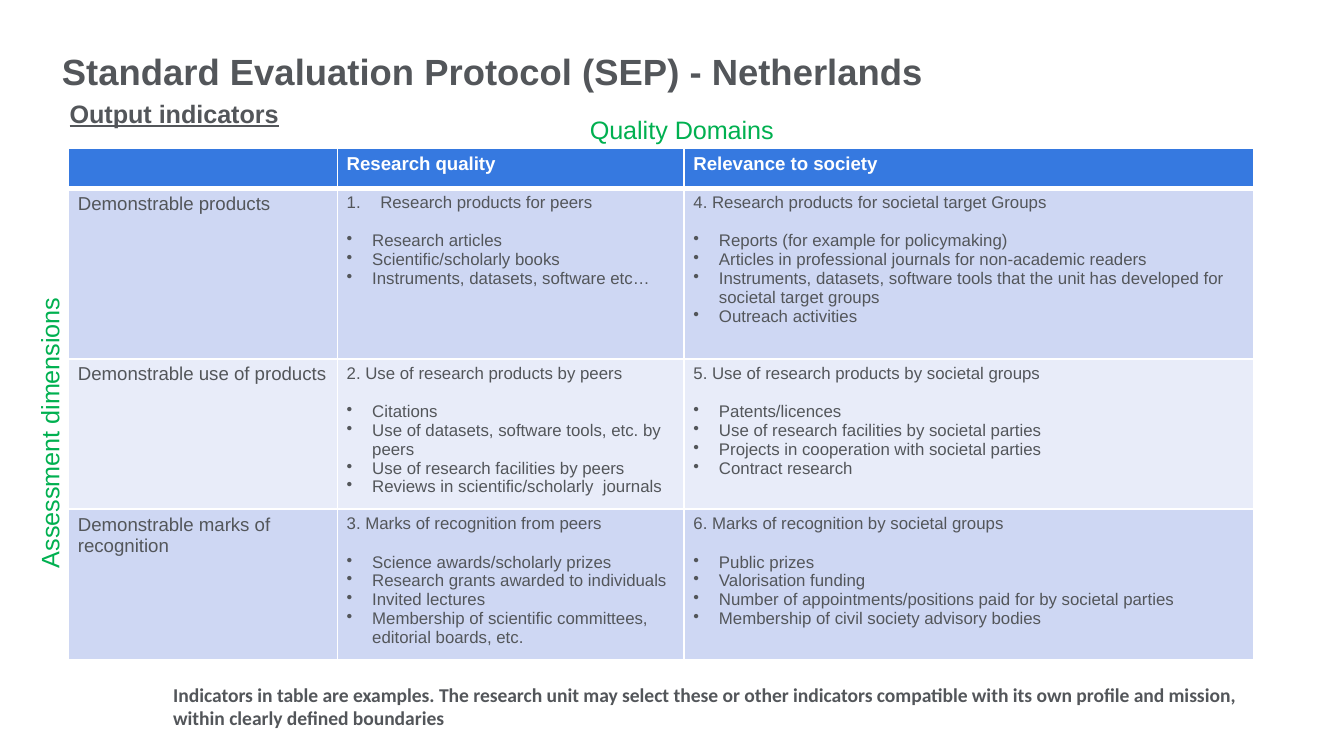
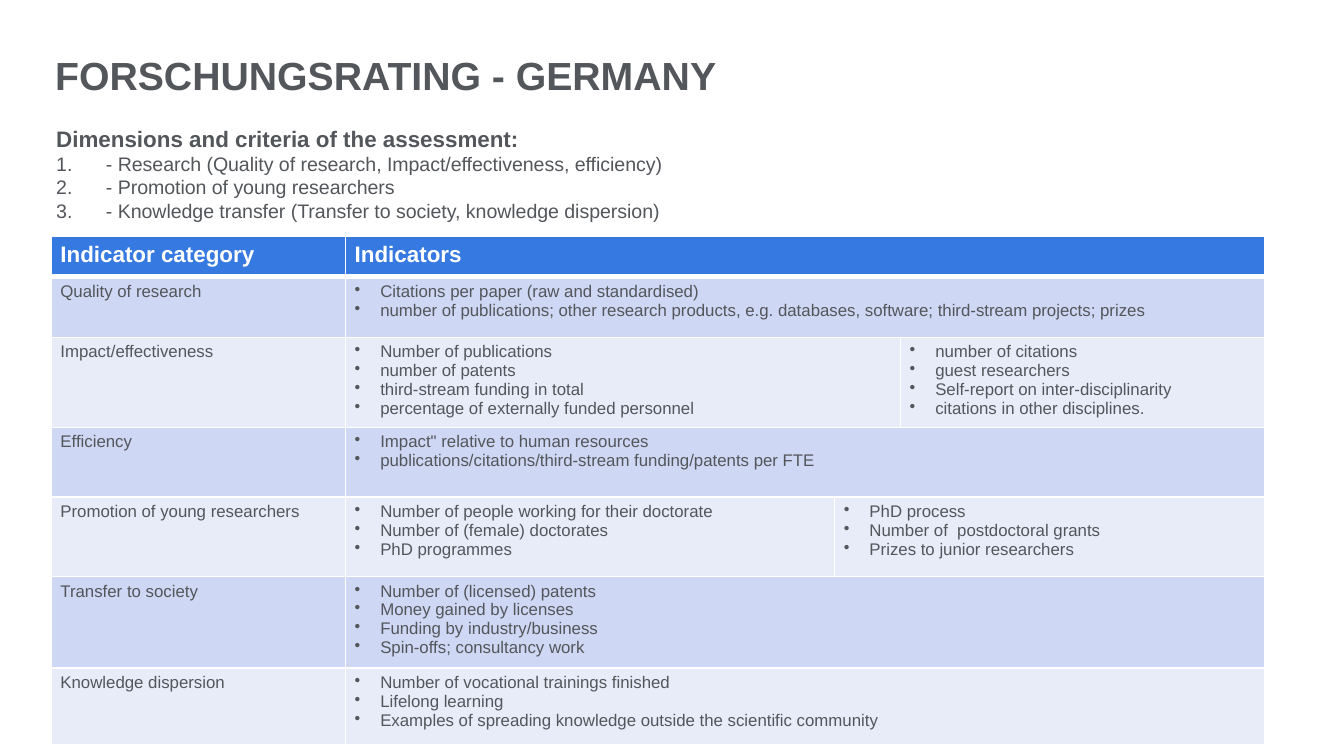
"""Builds two slides on national research evaluation schemes."""
import dataclasses
import typing

import lxml.etree
import pptx
import pptx.dml.color
import pptx.enum.text
import pptx.oxml.ns
import pptx.presentation
import pptx.slide
import pptx.util

COLORS = {
    "text": "53565A",
    "axis": "00B050",
    "header": "3679E0",
    "band_dark": "CED7F3",
    "band_light": "E8ECF9",
    "white": "FFFFFF",
}
GRID_COLUMNS, GRID_ROWS = 100, 56.25
GRID_UNIT = pptx.util.Inches(10) / GRID_COLUMNS
BULLET_INDENT = 1.9


@dataclasses.dataclass(frozen=True)
class Line:
    """One paragraph with its look; the indent is in grid columns."""
    text: str
    size: float = 9
    color: str = "text"
    bold: bool = False
    underline: bool = False
    font: str = "Arial"
    marker: typing.Literal["", "bullet", "number"] = ""
    indent: float = BULLET_INDENT
    after: float = 0
    spacing: float = 1.0


@dataclasses.dataclass(frozen=True)
class Box:
    """An area in grid columns and rows."""
    left: float
    top: float
    width: float
    height: float

    def lengths(self) -> list[pptx.util.Emu]:
        """Return left, top, width and height as lengths."""
        return [grid(value) for value in dataclasses.astuple(self)]


@dataclasses.dataclass(frozen=True)
class Label:
    """A free text box."""
    box: Box
    lines: list[Line]
    wrap: bool = True
    rotation: float = 0


@dataclasses.dataclass(frozen=True)
class Cell:
    """Table cell content and the number of columns it covers."""
    lines: list[Line]
    span: int = 1


@dataclasses.dataclass(frozen=True)
class Grid:
    """A table with its column widths, row heights and cells."""
    left: float
    top: float
    widths: list[float]
    heights: list[float]
    rows: list[list[Cell]]


def grid(count: float) -> pptx.util.Emu:
    """Convert grid units to a length."""
    return pptx.util.Emu(round(count * GRID_UNIT))


def rgb(name: str) -> pptx.dml.color.RGBColor:
    """Look up a named colour."""
    return pptx.dml.color.RGBColor.from_string(COLORS[name])


def add_element(parent: typing.Any, tag: str, **attributes: str) -> typing.Any:
    """Append a DrawingML child element."""
    return lxml.etree.SubElement(parent, pptx.oxml.ns.qn(f"a:{tag}"), **attributes)


def write(frame: typing.Any, lines: list[Line]) -> None:
    """Fill a text frame with formatted paragraphs."""
    for index, line in enumerate(lines):
        paragraph = frame.add_paragraph() if index else frame.paragraphs[0]
        paragraph.alignment = pptx.enum.text.PP_ALIGN.LEFT
        paragraph.line_spacing = line.spacing
        paragraph.space_before = pptx.util.Pt(0)
        paragraph.space_after = pptx.util.Pt(line.after)
        if line.marker:
            properties = paragraph._p.get_or_add_pPr()
            properties.set("marL", str(grid(line.indent)))
            properties.set("indent", str(-grid(line.indent)))
            if line.marker == "bullet":
                add_element(properties, "buChar", char="•")
            else:
                add_element(properties, "buAutoNum", type="arabicPeriod")
        font = paragraph.font
        font.name, font.size = line.font, pptx.util.Pt(line.size)
        font.bold, font.underline = line.bold, line.underline
        font.color.rgb = rgb(line.color)
        if line.text:
            paragraph.add_run().text = line.text
        else:
            add_element(paragraph._p, "endParaRPr", sz=str(round(line.size * 100)))


def set_title(slide: pptx.slide.Slide, box: Box, text: str, size: float) -> None:
    """Place and format the title placeholder."""
    title = slide.shapes.title
    title.left, title.top, title.width, title.height = box.lengths()
    frame = title.text_frame
    frame.auto_size = pptx.enum.text.MSO_AUTO_SIZE.NONE
    frame.vertical_anchor = pptx.enum.text.MSO_ANCHOR.TOP
    frame.margin_left = frame.margin_right = grid(0.9)
    frame.margin_top = frame.margin_bottom = grid(0.4)
    write(frame, [Line(text, size, bold=True, spacing=0.9)])


def add_label(slide: pptx.slide.Slide, label: Label) -> None:
    """Add a text box that grows with its text."""
    shape = slide.shapes.add_textbox(*label.box.lengths())
    shape.rotation = label.rotation
    shape.text_frame.word_wrap = label.wrap
    shape.text_frame.auto_size = pptx.enum.text.MSO_AUTO_SIZE.SHAPE_TO_FIT_TEXT
    write(shape.text_frame, label.lines)


def add_borders(cell: typing.Any, row: int) -> None:
    """Rule a cell in white, thicker below the header."""
    thick = {0: "lnB", 1: "lnT"}.get(row)
    for side in ("lnL", "lnR", "lnT", "lnB"):
        points = 3 if side == thick else 1
        border = add_element(cell._tc.get_or_add_tcPr(), side, w=str(pptx.util.Pt(points)))
        fill = add_element(border, "solidFill")
        add_element(fill, "srgbClr", val=COLORS["white"])


def add_grid(slide: pptx.slide.Slide, content: Grid) -> None:
    """Add a banded table with merged cells where a cell spans columns."""
    box = Box(content.left, content.top, sum(content.widths), sum(content.heights))
    table = slide.shapes.add_table(
        len(content.heights), len(content.widths), *box.lengths()).table
    table.horz_banding = False
    for column, width in zip(table.columns, content.widths):
        column.width = grid(width)
    for row, (height, cells) in enumerate(zip(content.heights, content.rows)):
        table.rows[row].height = grid(height)
        band = "header" if row == 0 else "band_dark" if row % 2 else "band_light"
        for cell in table.rows[row].cells:
            add_borders(cell, row)
            cell.fill.solid()
            cell.fill.fore_color.rgb = rgb(band)
            cell.margin_left = cell.margin_right = grid(0.7)
            cell.margin_top = cell.margin_bottom = grid(0.4)
        column = 0
        for item in cells:
            cell = table.cell(row, column)
            if item.span > 1:
                cell.merge(table.cell(row, column + item.span - 1))
            write(cell.text_frame, item.lines)
            column += item.span


def header_row(size: float, *cells: tuple[str, int]) -> list[Cell]:
    """Make header cells from texts and spans."""
    return [Cell([Line(text, size, "white", bold=True)], span) for text, span in cells]


def bullets(*texts: str) -> list[Line]:
    """Make bulleted lines."""
    return [Line(text, marker="bullet") for text in texts]


def topic(heading: str, *texts: str, numbered: bool = False) -> Cell:
    """Make a cell with a heading set apart from its bullets."""
    marker = "number" if numbered else ""
    return Cell([Line(heading, marker=marker, indent=2.5, after=10.35), *bullets(*texts)])


def dimension(text: str) -> Cell:
    """Make a row heading of the indicator table."""
    return Cell([Line(text, 10)])


def category(name: str, *groups: tuple[int, list[str]]) -> list[Cell]:
    """Make a row of a category and its spanned bullet groups."""
    return [Cell([Line(name)])] + [Cell(bullets(*texts), span) for span, texts in groups]


NETHERLANDS_TABLE = Grid(5.1, 11, [20, 25.8, 42.4], [3, 12.7, 11.2, 11.2], [
    header_row(10, ("", 1), ("Research quality", 1), ("Relevance to society", 1)),
    [dimension("Demonstrable products"),
     topic("Research products for peers", "Research articles", "Scientific/scholarly books",
           "Instruments, datasets, software etc…", numbered=True),
     topic("4. Research products for societal target Groups",
           "Reports (for example for policymaking)",
           "Articles in professional journals for non-academic readers",
           "Instruments, datasets, software tools that the unit has developed for "
           "societal target groups",
           "Outreach activities")],
    [dimension("Demonstrable use of products"),
     topic("2. Use of research products by peers", "Citations",
           "Use of datasets, software tools, etc. by peers",
           "Use of research facilities by peers",
           "Reviews in scientific/scholarly  journals"),
     topic("5. Use of research products by societal groups", "Patents/licences",
           "Use of research facilities by societal parties",
           "Projects in cooperation with societal parties", "Contract research")],
    [dimension("Demonstrable marks of recognition"),
     topic("3. Marks of recognition from peers", "Science awards/scholarly prizes",
           "Research grants awarded to individuals", "Invited lectures",
           "Membership of scientific committees, editorial boards, etc."),
     topic("6. Marks of recognition by societal groups", "Public prizes",
           "Valorisation funding",
           "Number of appointments/positions paid for by societal parties",
           "Membership of civil society advisory bodies")],
])
NETHERLANDS_LABELS = [
    Label(Box(4.2, 6.8, 90, 5.6),
          [Line("Output indicators", 13.5, bold=True, underline=True)]),
    Label(Box(42.9, 8, 15.9, 3.3), [Line("Quality Domains", 13.5, "axis")], wrap=False),
    Label(Box(-7.5, 30.4, 22.4, 3.3), [Line("Assessment dimensions", 13.5, "axis")],
          wrap=False, rotation=270),
    Label(Box(11.9, 50.3, 82.2, 4.5), [Line(
        "Indicators in table are examples. The research unit may select these or other "
        "indicators compatible with its own profile and mission, within clearly defined "
        "boundaries", 10.5, bold=True, font="Calibri")]),
]
GERMANY_TABLE = Grid(
    3.8, 17.6, [21.9, 36.4, 4.9, 27.1], [3, 4.5, 6.7, 5.2, 5.9, 6.8, 5.7], [
        header_row(12, ("Indicator category", 1), ("Indicators", 3)),
        category("Quality of research", (3, [
            "Citations per paper (raw and standardised)",
            "number of publications; other research products, e.g. databases, software; "
            "third‐stream projects; prizes"])),
        category("Impact/effectiveness", (2, [
            "Number of publications", "number of patents", "third‐stream funding in total",
            "percentage of externally funded personnel"]), (1, [
                "number of citations", "guest researchers",
                "Self‐report on inter-disciplinarity", "citations in other disciplines."])),
        category("Efficiency", (3, [
            "Impact\" relative to human resources",
            "publications/citations/third‐stream funding/patents per FTE"])),
        category("Promotion of young researchers", (1, [
            "Number of people working for their doctorate", "Number of (female) doctorates",
            "PhD programmes"]), (2, [
                "PhD process", "Number of  postdoctoral grants",
                "Prizes to junior researchers"])),
        category("Transfer to society", (3, [
            "Number of (licensed) patents", "Money gained by licenses",
            "Funding by industry/business", "Spin‐offs; consultancy work"])),
        category("Knowledge dispersion", (3, [
            "Number of vocational trainings finished", "Lifelong learning",
            "Examples of spreading knowledge outside the scientific community"])),
    ])
CRITERIA = [
    "‐ Research (Quality of research, Impact/effectiveness, efficiency)",
    "‐ Promotion of young researchers",
    "‐ Knowledge transfer (Transfer to society, knowledge dispersion)",
]
GERMANY_LABELS = [Label(Box(3.2, 8.8, 91.2, 8.3), [
    Line("Dimensions and criteria of the assessment:", 12, bold=True),
    *[Line(text, 10.5, marker="number", indent=3.7) for text in CRITERIA],
])]


def add_slide(presentation: pptx.presentation.Presentation, title: str, title_box: Box,
              title_size: float, content: Grid, labels: list[Label]) -> None:
    """Add a slide with a title, a table and text boxes."""
    slide = presentation.slides.add_slide(presentation.slide_layouts[5])
    set_title(slide, title_box, title, title_size)
    add_grid(slide, content)
    for label in labels:
        add_label(slide, label)


def main() -> None:
    """Build and save the presentation."""
    presentation = pptx.Presentation()
    presentation.slide_width = grid(GRID_COLUMNS)
    presentation.slide_height = grid(GRID_ROWS)
    add_slide(presentation, "Standard Evaluation Protocol (SEP) - Netherlands",
              Box(3.7, 3.6, 95.8, 4.1), 19.5, NETHERLANDS_TABLE, NETHERLANDS_LABELS)
    add_slide(presentation, "FORSCHUNGSRATING - GERMANY",
              Box(3.2, 3.8, 95.8, 4.1), 21, GERMANY_TABLE, GERMANY_LABELS)
    presentation.save("out.pptx")


if __name__ == "__main__":
    main()
